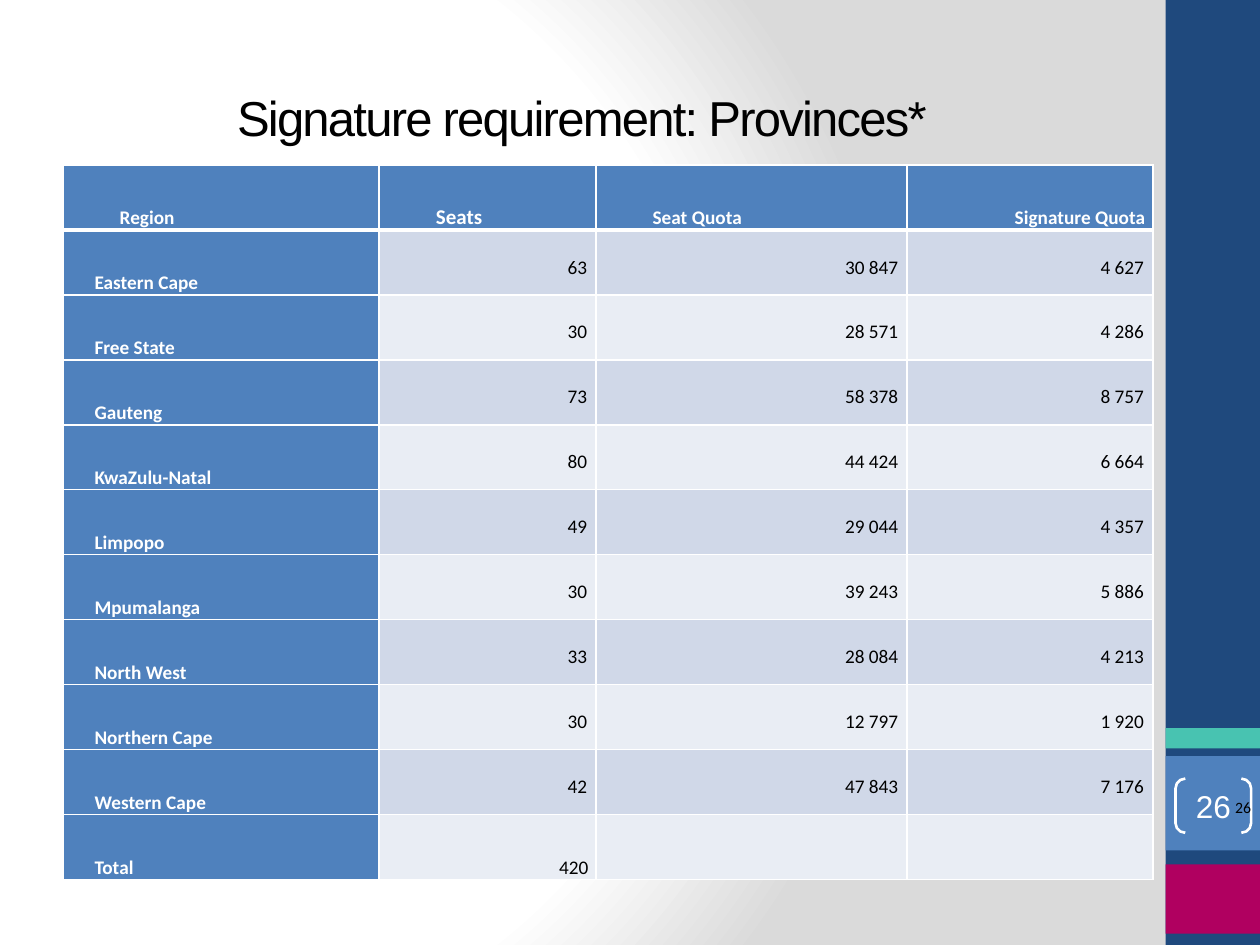
"""Build the slide with signature requirements by province."""
from pptx import Presentation
from pptx.dml.color import RGBColor
from pptx.enum.shapes import MSO_SHAPE
from pptx.enum.text import MSO_ANCHOR, PP_ALIGN
from pptx.oxml import parse_xml
from pptx.util import Inches, Pt

RECT, BRACKETS = MSO_SHAPE.RECTANGLE, MSO_SHAPE.DOUBLE_BRACKET
TOP, MIDDLE, BOTTOM = MSO_ANCHOR.TOP, MSO_ANCHOR.MIDDLE, MSO_ANCHOR.BOTTOM
LEFT, CENTER, RIGHT = PP_ALIGN.LEFT, PP_ALIGN.CENTER, PP_ALIGN.RIGHT
NS = 'xmlns:a="http://schemas.openxmlformats.org/drawingml/2006/main"'
COLORS = {
    "white": "FFFFFF", "grey": "DADADA", "black": "000000",
    "navy": "1F497D", "blue": "4F81BD", "teal": "48C3B1", "magenta": "B00060",
    "dark_band": "D0D8E8", "light_band": "E9EDF4",
}
HEADINGS = ["Region", "Seats", "Seat Quota", "Signature Quota"]
PROVINCES = [
    ("Eastern Cape", "63", "30 847", "4 627"),
    ("Free State", "30", "28 571", "4 286"),
    ("Gauteng", "73", "58 378", "8 757"),
    ("KwaZulu-Natal", "80", "44 424", "6 664"),
    ("Limpopo", "49", "29 044", "4 357"),
    ("Mpumalanga", "30", "39 243", "5 886"),
    ("North West", "33", "28 084", "4 213"),
    ("Northern Cape", "30", "12 797", "1 920"),
    ("Western Cape", "42", "47 843", "7 176"),
    ("Total", "420", "", ""),
]
COLUMN_WIDTHS = [2.51, 1.72, 2.47, 1.95]


def rgb(name):
    return RGBColor.from_string(COLORS[name])


def write(frame, text, size, font, color, align, anchor, insets, bold=False):
    frame.word_wrap = True
    frame.vertical_anchor = anchor
    (frame.margin_left, frame.margin_top,
     frame.margin_right, frame.margin_bottom) = [Inches(inset) for inset in insets]
    paragraph = frame.paragraphs[0]
    paragraph.alignment = align
    run = paragraph.add_run()
    run.text = text
    run.font.size, run.font.name, run.font.bold = Pt(size), font, bold
    run.font.color.rgb = rgb(color)
    return paragraph


prs = Presentation()
prs.slide_width, prs.slide_height = Inches(10), Inches(7.5)
slide = prs.slides.add_slide(prs.slide_layouts[6])

slide.background.fill.solid()
plain_fill = slide.background._cSld.bg.bgPr.find(
    "{http://schemas.openxmlformats.org/drawingml/2006/main}solidFill")
stops = "".join(
    f'<a:gs pos="{pos * 1000}"><a:srgbClr val="{COLORS[name]}"/></a:gs>'
    for pos, name in [(0, "white"), (75, "white"), (100, "grey")])
plain_fill.getparent().replace(plain_fill, parse_xml(
    f'<a:gradFill {NS} rotWithShape="1"><a:gsLst>{stops}</a:gsLst><a:path path="circle">'
    '<a:fillToRect l="20000" t="50000" r="100000" b="50000"/></a:path></a:gradFill>'))

for top, height, color in [(0, 7.5, "navy"), (6, 0.75, "blue"),
                           (5.78, 0.16, "teal"), (6.86, 0.55, "magenta")]:
    band = slide.shapes.add_shape(RECT, Inches(9.25), Inches(top), Inches(0.75), Inches(height))
    band.shadow.inherit = False
    band.fill.solid()
    band.fill.fore_color.rgb = rgb(color)
    band.line.fill.background()

title = slide.shapes.add_textbox(Inches(0.5), Inches(0.3), Inches(8.33), Inches(1.25))
heading = write(title.text_frame, "Signature requirement: Provinces* ", 28, "Arial",
                "black", CENTER, MIDDLE, (0.1, 0.05, 0.1, 0.05))
heading.runs[0].font._element.set("spc", "-100")

table = slide.shapes.add_table(len(PROVINCES) + 1, len(HEADINGS), Inches(0.5), Inches(1.31),
                               Inches(8.65), Inches(5.67)).table
for column, width in zip(table.columns, COLUMN_WIDTHS):
    column.width = Inches(width)

for r, values in enumerate([HEADINGS, *PROVINCES]):
    for c, value in enumerate(values):
        cell = table.cell(r, c)
        is_label = r == 0 or c == 0
        is_total = values[0] == "Total"
        if value:
            low = is_label or is_total
            align = RIGHT if c == 3 or not is_label else LEFT
            paragraph = write(
                cell.text_frame, value, 12 if value == "Seats" else 11, "Calibri",
                "white" if is_label else "black", align, BOTTOM if low else TOP,
                (0.06, 0, 0.06, 0) if low else (0.07, 0.19, 0.07, 0), is_label)
            cell.vertical_anchor = BOTTOM if low else TOP
            (cell.margin_left, cell.margin_top, cell.margin_right, cell.margin_bottom) = [
                Inches(inset) for inset in
                ((0.06, 0, 0.06, 0) if low else (0.07, 0.19, 0.07, 0))]
            if align == LEFT:
                indent = Inches(0.39 if r == 0 else 0.19)
                paragraph._p.get_or_add_pPr().set("indent", str(indent))
            else:
                paragraph.line_spacing = 1.0 if is_total else 1.07
        properties = cell._tc.get_or_add_tcPr()
        for side in "LRTB":
            heavy = (r == 0 and side == "B") or (r == 1 and side == "T")
            properties.append(parse_xml(
                f'<a:ln{side} {NS} w="{Pt(3 if heavy else 1)}"><a:solidFill>'
                f'<a:srgbClr val="{COLORS["white"]}"/></a:solidFill></a:ln{side}>'))
        cell.fill.solid()
        cell.fill.fore_color.rgb = rgb(
            "blue" if is_label else "dark_band" if r % 2 else "light_band")

brackets = slide.shapes.add_shape(BRACKETS, Inches(9.33), Inches(6.18), Inches(0.6), Inches(0.43))
brackets.shadow.inherit = False
brackets.adjustments[0] = 0.18
brackets.fill.background()
brackets.line.color.rgb = rgb("white")
brackets.line.width = Pt(1.5)
write(brackets.text_frame, "26", 18, "Arial", "white", CENTER, MIDDLE, (0, 0, 0, 0))

page = slide.shapes.add_textbox(Inches(9.22), Inches(6.26), Inches(0.78), Inches(0.3))
write(page.text_frame, "26", 9, "Calibri", "black", RIGHT, MIDDLE, (0.04, 0.04, 0.07, 0.04))

prs.save("out.pptx")
